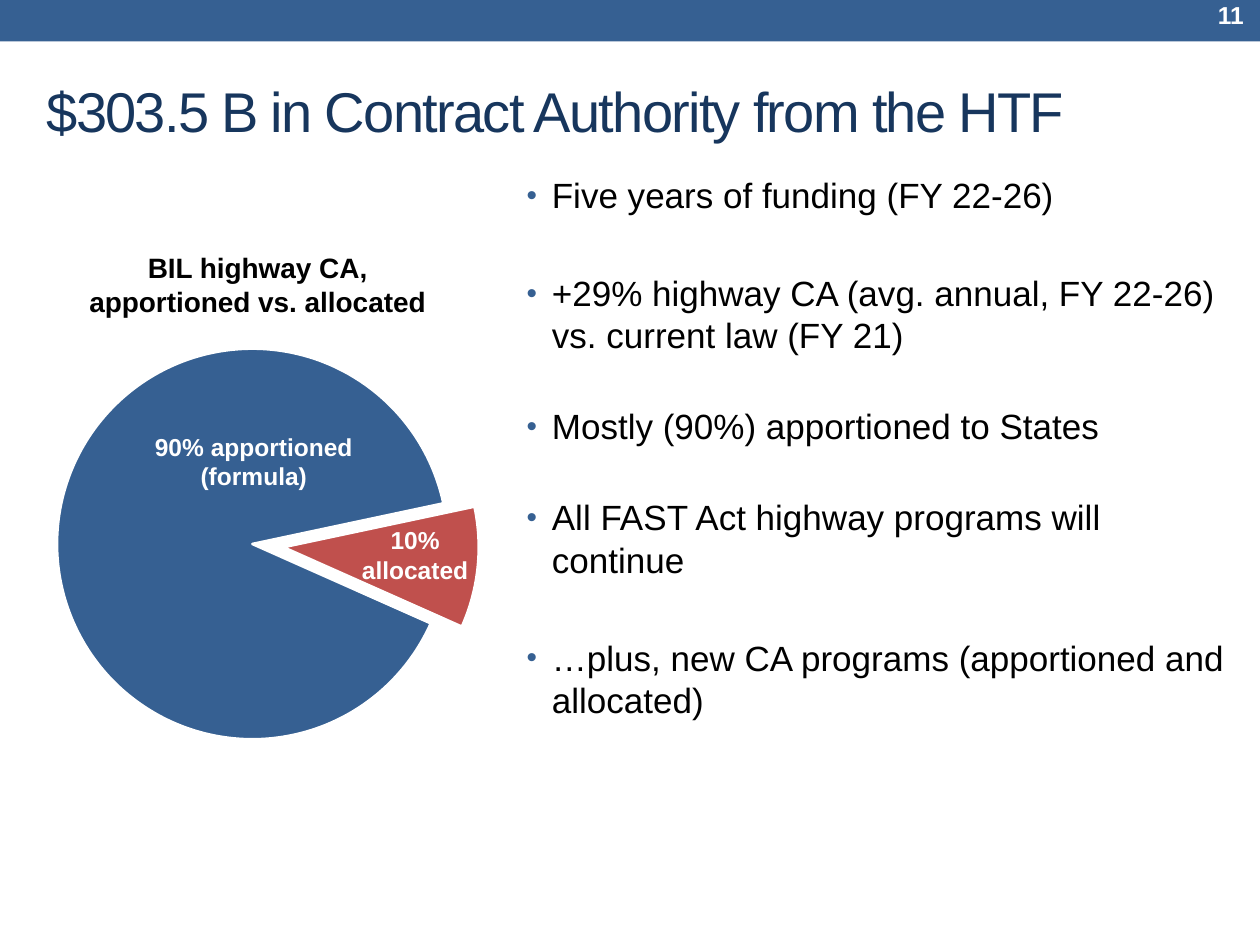
from dataclasses import dataclass

from lxml.etree import SubElement
from pptx import Presentation
from pptx.chart.data import CategoryChartData
from pptx.dml.color import RGBColor
from pptx.enum.chart import XL_CHART_TYPE as ChartType
from pptx.enum.shapes import MSO_SHAPE as Preset
from pptx.enum.text import MSO_ANCHOR as Anchor, MSO_AUTO_SIZE as AutoSize, PP_ALIGN as Align
from pptx.oxml.ns import qn
from pptx.util import Inches, Pt


@dataclass(frozen=True)
class Theme:
    font: str = "Arial"
    blue: str = "366092"
    navy: str = "17365D"
    red: str = "C0504D"
    black: str = "000000"
    white: str = "FFFFFF"
    title_size: int = 32
    body_size: int = 20
    heading_size: int = 16
    label_size: int = 14
    chart_size: int = 10


def rgb(value):
    return RGBColor.from_string(value)


class SlideBuilder:
    def __init__(self, slide, theme):
        self.slide = slide
        self.theme = theme

    def place(self, shape, box):
        for side, length in zip(("left", "top", "width", "height"), box):
            setattr(shape, side, Inches(length))

    def style(self, font, size, color, bold=False):
        formats = {"name": self.theme.font, "size": Pt(size), "bold": bold}
        for attribute, value in formats.items():
            setattr(font, attribute, value)
        font.color.rgb = rgb(color)

    def band(self, box, color):
        band = self.slide.shapes.add_shape(Preset.RECTANGLE, *map(Inches, box))
        band.shadow.inherit = False
        band.fill.solid()
        band.fill.fore_color.rgb = rgb(color)
        band.line.fill.background()

    def title(self, text, box):
        title = self.slide.shapes.title
        self.place(title, box)
        frame = title.text_frame
        frame.text = text
        frame.auto_size = AutoSize.NONE
        frame.vertical_anchor = Anchor.MIDDLE
        frame.paragraphs[0].alignment = Align.LEFT
        run = frame.paragraphs[0].runs[0]
        self.style(run.font, self.theme.title_size, self.theme.navy)
        run.font._element.set("spc", "-100")

    def bullets(self, items, box):
        body = self.slide.placeholders[1]
        self.place(body, box)
        frame = body.text_frame
        frame.text = "\n".join(text for text, _ in items)
        frame.auto_size = AutoSize.NONE
        for paragraph, (_, gap) in zip(frame.paragraphs, items):
            paragraph.space_before = Pt(gap)
            self.style(paragraph.runs[0].font, self.theme.body_size, self.theme.black)
            props = paragraph._p.get_or_add_pPr()
            props.set("marL", str(Inches(0.2)))
            props.set("indent", str(Inches(-0.2)))
            bullet_color = SubElement(props, qn("a:buClr"))
            SubElement(bullet_color, qn("a:srgbClr"), val=self.theme.blue)
            SubElement(props, qn("a:buSzPct"), val="85000")
            SubElement(props, qn("a:buFont"), typeface=self.theme.font)
            SubElement(props, qn("a:buChar"), char="•")

    def label(self, text, box, size, color, align=Align.CENTER, anchor=Anchor.TOP):
        frame = self.slide.shapes.add_textbox(*map(Inches, box)).text_frame
        frame.word_wrap = True
        frame.vertical_anchor = anchor
        paragraph = frame.paragraphs[0]
        paragraph.text = text
        paragraph.alignment = align
        for run in paragraph.runs:
            self.style(run.font, size, color, bold=True)

    def pie(self, shares, colors, box, plot_box, start_angle, explosion):
        data = CategoryChartData()
        data.categories = [str(n) for n in range(1, len(shares) + 1)]
        data.add_series("Series 1", shares)
        chart = self.slide.shapes.add_chart(ChartType.PIE, *map(Inches, box), data).chart
        chart.has_legend = False
        chart.has_title = False
        self.style(chart.font, self.theme.chart_size, self.theme.black)
        plot = chart.plots[0]
        plot.vary_by_categories = True

        # Pulled-apart, rotated slices
        series = plot.series[0]
        explode = SubElement(series._element, qn("c:explosion"), val=str(explosion))
        series._element.find(qn("c:cat")).addprevious(explode)
        SubElement(plot._element, qn("c:firstSliceAng"), val=str(start_angle))
        for index, color in enumerate(colors):
            slice_format = series.points[index].format
            slice_format.fill.solid()
            slice_format.fill.fore_color.rgb = rgb(color)
            slice_format.line.color.rgb = rgb(self.theme.white)
            slice_format.line.width = Pt(1.5)

        # Fixed inner plot area
        area = plot._element.getparent()
        for automatic in area.findall(qn("c:layout")):
            area.remove(automatic)
        layout = SubElement(area, qn("c:layout"))
        area.insert(0, layout)
        manual = SubElement(layout, qn("c:manualLayout"))
        settings = {"layoutTarget": "inner", "xMode": "edge", "yMode": "edge"}
        settings.update(zip("xywh", plot_box))
        for tag, value in settings.items():
            SubElement(manual, qn(f"c:{tag}"), val=str(value))


def main():
    theme = Theme()
    deck = Presentation()
    deck.slide_width, deck.slide_height = Inches(10), Inches(7.5)
    builder = SlideBuilder(deck.slides.add_slide(deck.slide_layouts[1]), theme)

    # Header and title
    builder.band((0, -0.07, 10, 0.4), theme.blue)
    builder.title("$303.5 B in Contract Authority from the HTF", (0.27, 0.39, 9.73, 0.97))

    # Key points, each with the space above it in points
    builder.bullets([
        ("Five years of funding (FY 22-26)", 0),
        ("+29% highway CA (avg. annual, FY 22-26) vs. current law (FY 21)", 32),
        ("Mostly (90%) apportioned to States", 28),
        ("All FAST Act highway programs will continue", 28),
        ("…plus, new CA programs (apportioned and allocated)", 32),
    ], (4.08, 1.33, 5.77, 5.58))

    # Pie of apportioned and allocated shares
    builder.label("BIL highway CA,\vapportioned vs. allocated", (0.15, 1.94, 3.79, 0.72),
                  theme.heading_size, theme.black)
    builder.pie((90, 10), (theme.blue, theme.red), (0, 2.42, 4.17, 3.94),
                (0.08, 0.06, 0.86, 0.85), start_angle=114, explosion=8)
    for text, box in (("10% allocated", (2.63, 4.12, 1.33, 0.64)),
                      ("90% apportioned (formula)", (0.93, 3.38, 2.17, 0.74))):
        builder.label(text, box, theme.label_size, theme.white)

    # Slide number
    builder.label("11", (8.8, -0.06, 1.17, 0.36), theme.label_size, theme.white,
                  Align.RIGHT, Anchor.MIDDLE)

    deck.save("out.pptx")


if __name__ == "__main__":
    main()
